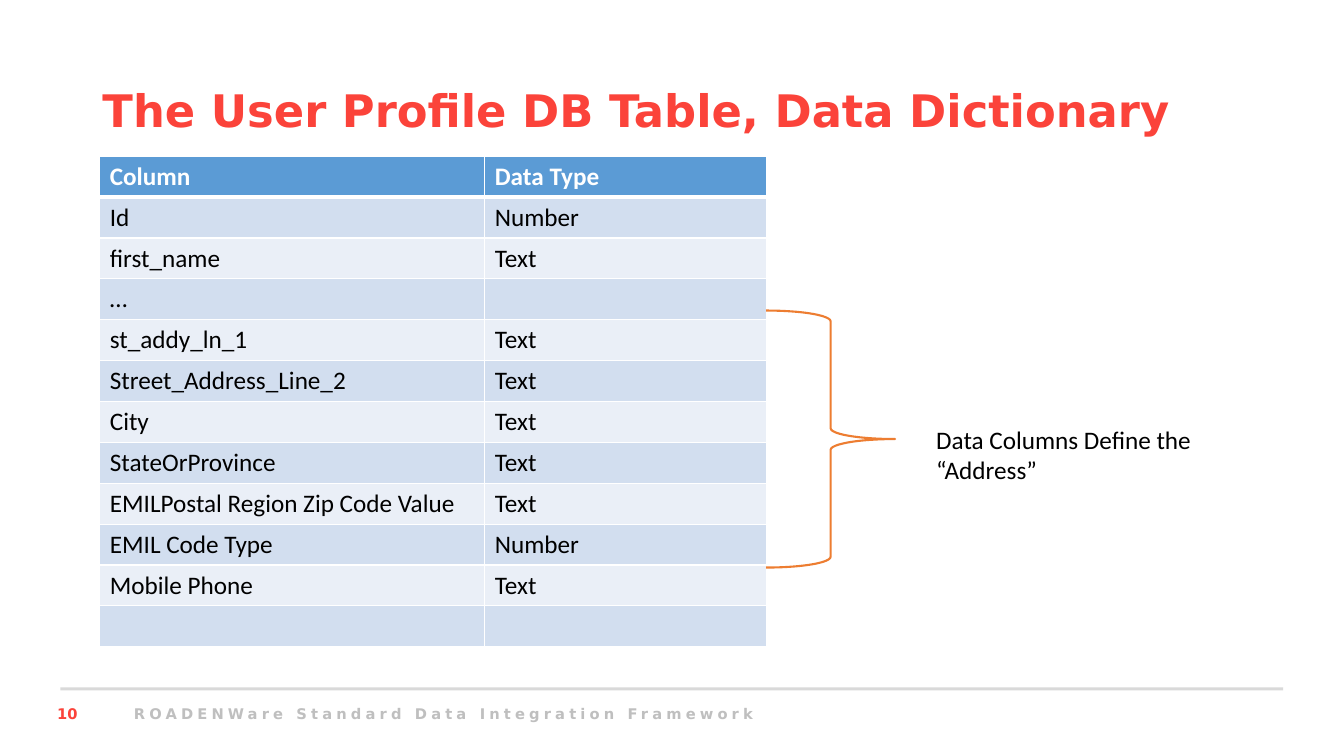
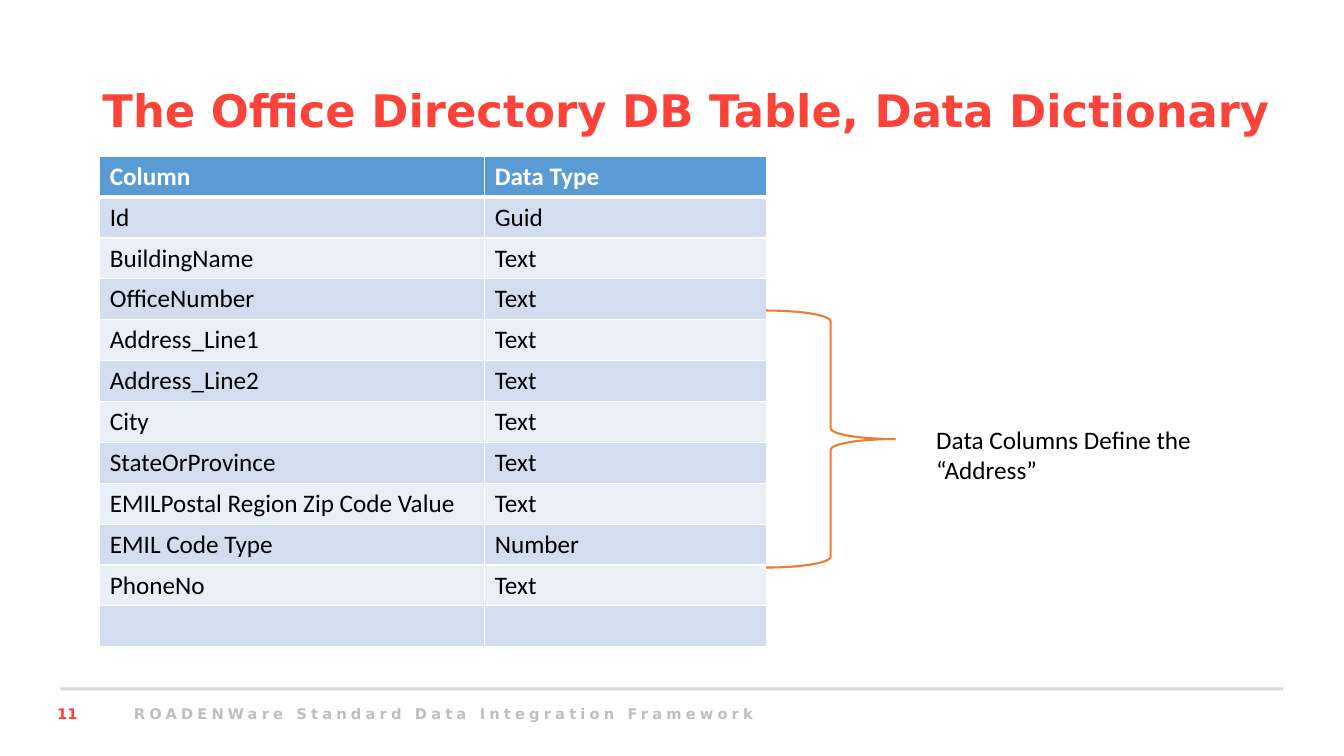
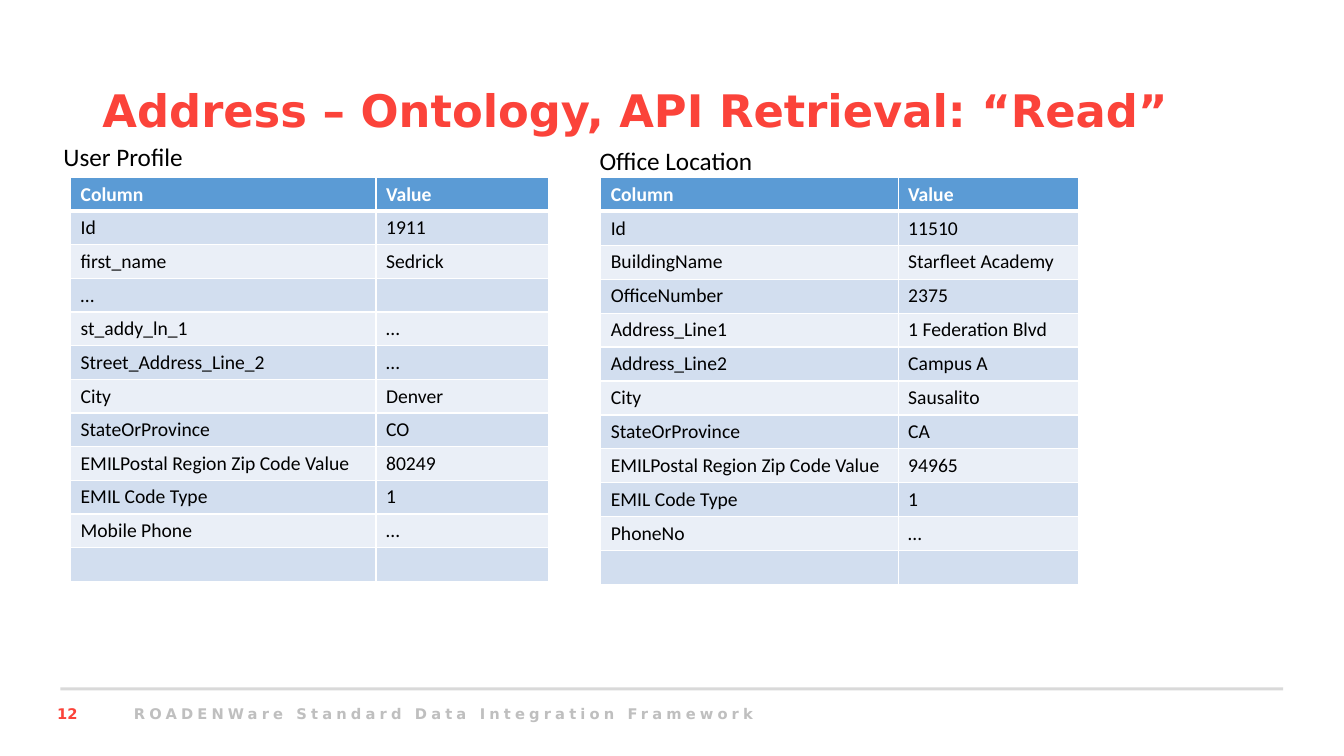
"""Builds three slides that describe the address columns of two database tables."""
from dataclasses import dataclass

from lxml.etree import SubElement
from pptx import Presentation
from pptx.dml.color import RGBColor
from pptx.enum.shapes import MSO_SHAPE as Shape
from pptx.enum.text import MSO_ANCHOR as Anchor, MSO_AUTO_SIZE as AutoSize, PP_ALIGN as Align
from pptx.oxml.ns import qn
from pptx.util import Pt


@dataclass(frozen=True)
class Theme:
    """Colours, fonts and type sizes of the deck."""
    accent: str = "FB433A"
    rule: str = "D9D9D9"
    footer: str = "BFBFBF"
    ink: str = "000000"
    white: str = "FFFFFF"
    header: str = "5B9BD5"
    bands: tuple = ("D2DEEF", "EAEFF7")
    brace: str = "ED7D31"
    display: str = "DejaVu Sans"
    body: str = "Calibri"
    title_size: float = 32
    body_size: float = 18
    small_size: float = 14
    footer_size: float = 10.5


THEME = Theme()
FOOTER = "ROADENWare Standard Data Integration Framework"

USER_FIELDS = [
    ("Id", "Number", "1911"),
    ("first_name", "Text", "Sedrick"),
    ("…", "", ""),
    ("st_addy_ln_1", "Text", "…"),
    ("Street_Address_Line_2", "Text", "…"),
    ("City", "Text", "Denver"),
    ("StateOrProvince", "Text", "CO"),
    ("EMILPostal Region Zip Code Value", "Text", "80249"),
    ("EMIL Code Type", "Number", "1"),
    ("Mobile Phone", "Text", "…"),
    ("", "", ""),
]
OFFICE_FIELDS = [
    ("Id", "Guid", "11510"),
    ("BuildingName", "Text", "Starfleet Academy"),
    ("OfficeNumber", "Text", "2375"),
    ("Address_Line1", "Text", "1 Federation Blvd"),
    ("Address_Line2", "Text", "Campus A"),
    ("City", "Text", "Sausalito"),
    ("StateOrProvince", "Text", "CA"),
    ("EMILPostal Region Zip Code Value", "Text", "94965"),
    ("EMIL Code Type", "Number", "1"),
    ("PhoneNo", "Text", "…"),
    ("", "", ""),
]


def points(*lengths):
    """Return the lengths as point measures."""
    return [Pt(length) for length in lengths]


def write(frame, text, size=THEME.body_size, color=THEME.ink, face=THEME.body,
          bold=False, tracking=0, leading=None):
    """Put one formatted paragraph into a text frame."""
    paragraph = frame.paragraphs[0]
    paragraph.alignment = Align.LEFT
    if leading:
        paragraph.line_spacing = leading
    if not text:
        SubElement(paragraph._p, qn("a:endParaRPr"), sz=str(int(size * 100)))
        return
    run = paragraph.add_run()
    run.text = text
    run.font.size = Pt(size)
    run.font.name = face
    run.font.bold = bold
    run.font.color.rgb = RGBColor.from_string(color)
    if tracking:
        run.font._element.set("spc", str(tracking * 100))


def add_label(slide, text, box, wrap=True, **style):
    """Add a text box that grows with its text."""
    frame = slide.shapes.add_textbox(*points(*box)).text_frame
    frame.word_wrap = wrap
    frame.auto_size = AutoSize.SHAPE_TO_FIT_TEXT
    write(frame, text, **style)


def add_outline(slide, preset, box, fill=None, line=None):
    """Add a preset shape with a plain fill or a plain line."""
    shape = slide.shapes.add_shape(preset, *points(*box))
    shape.shadow.inherit = False
    if fill:
        shape.fill.solid()
        shape.fill.fore_color.rgb = RGBColor.from_string(fill)
    else:
        shape.fill.background()
    if line:
        shape.line.color.rgb = RGBColor.from_string(line)
        shape.line.width = Pt(1.5)
    else:
        shape.line.fill.background()


def set_borders(cell, top, bottom):
    """Give a cell white borders, with the top and bottom widths in points."""
    properties = cell._tc.get_or_add_tcPr()
    for side, width in (("L", 1), ("R", 1), ("T", top), ("B", bottom)):
        edge = SubElement(properties, qn(f"a:ln{side}"), w=str(Pt(width)))
        SubElement(SubElement(edge, qn("a:solidFill")), qn("a:srgbClr"), val=THEME.white)


def add_field_table(slide, rows, left, top, widths, row_height, size):
    """Add a banded table whose first row is the header."""
    box = points(left, top, sum(widths), row_height * len(rows))
    table = slide.shapes.add_table(len(rows), len(widths), *box).table
    for column, width in zip(table.columns, widths):
        column.width = Pt(width)
    for index, (row, values) in enumerate(zip(table.rows, rows)):
        row.height = Pt(row_height)
        is_header = index == 0
        fill = THEME.header if is_header else THEME.bands[(index - 1) % 2]
        for cell, value in zip(row.cells, values):
            set_borders(cell, top=3 if index == 1 else 1, bottom=3 if is_header else 1)
            cell.fill.solid()
            cell.fill.fore_color.rgb = RGBColor.from_string(fill)
            write(cell.text_frame, value, size=size, bold=is_header,
                  color=THEME.white if is_header else THEME.ink)


def add_page(deck, number, title, title_width=858):
    """Add a slide with its footer and title."""
    slide = deck.slides.add_slide(deck.slide_layouts[5])
    footer_style = dict(size=THEME.footer_size, face=THEME.display, bold=True)
    add_label(slide, str(number), (33.8, 499.7, 54.7, 21), color=THEME.accent, **footer_style)
    add_outline(slide, Shape.RECTANGLE, (43.2, 491, 873.4, 2.2), fill=THEME.rule)
    add_label(slide, FOOTER, (88.6, 499.7, 613.4, 21), color=THEME.footer, tracking=3,
              **footer_style)
    heading = slide.shapes.title
    heading.left, heading.top, heading.width, heading.height = points(66, 28.8, title_width, 104.4)
    frame = heading.text_frame
    frame.word_wrap = True
    frame.auto_size = AutoSize.NONE
    frame.vertical_anchor = Anchor.MIDDLE
    write(frame, title, size=THEME.title_size, color=THEME.accent, face=THEME.display,
          bold=True, leading=0.9)
    return slide


def add_dictionary_page(deck, number, title, fields, **layout):
    """Add a slide that lists column types and braces the address columns."""
    slide = add_page(deck, number, title, **layout)
    rows = [("Column", "Data Type")] + [(name, kind) for name, kind, _ in fields]
    add_field_table(slide, rows, 71.3, 111.6, (275, 201), 29.2, THEME.body_size)
    add_outline(slide, Shape.RIGHT_BRACE, (547.2, 221.8, 92.2, 183.6), line=THEME.brace)
    add_label(slide, "Data Columns Define the “Address”", (661.7, 299.5, 213, 51))


def add_record(slide, caption, caption_box, fields, left, widths, row_height):
    """Add a captioned table of one record's values."""
    rows = [("Column", "Value")] + [(name, value) for name, _, value in fields]
    add_field_table(slide, rows, left, 126.7, widths, row_height, THEME.small_size)
    add_label(slide, caption, caption_box, wrap=False)


def main():
    """Build and save the deck."""
    deck = Presentation()
    deck.slide_width, deck.slide_height = points(960, 540)
    add_dictionary_page(deck, 10, "The User Profile DB Table, Data Dictionary", USER_FIELDS,
                        title_width=828)
    add_dictionary_page(deck, 11, "The Office Directory DB Table, Data Dictionary", OFFICE_FIELDS)
    reading = add_page(deck, 12, "Address – Ontology, API Retrieval: “Read”")
    add_record(reading, "User Profile", (38.2, 97.2, 100.8, 29), USER_FIELDS,
               50.4, (218.2, 123.1), 24)
    add_record(reading, "Office Location", (421.2, 100.4, 125.3, 29), OFFICE_FIELDS,
               429.1, (212.4, 128.9), 24.25)
    deck.save("out.pptx")


if __name__ == "__main__":
    main()
